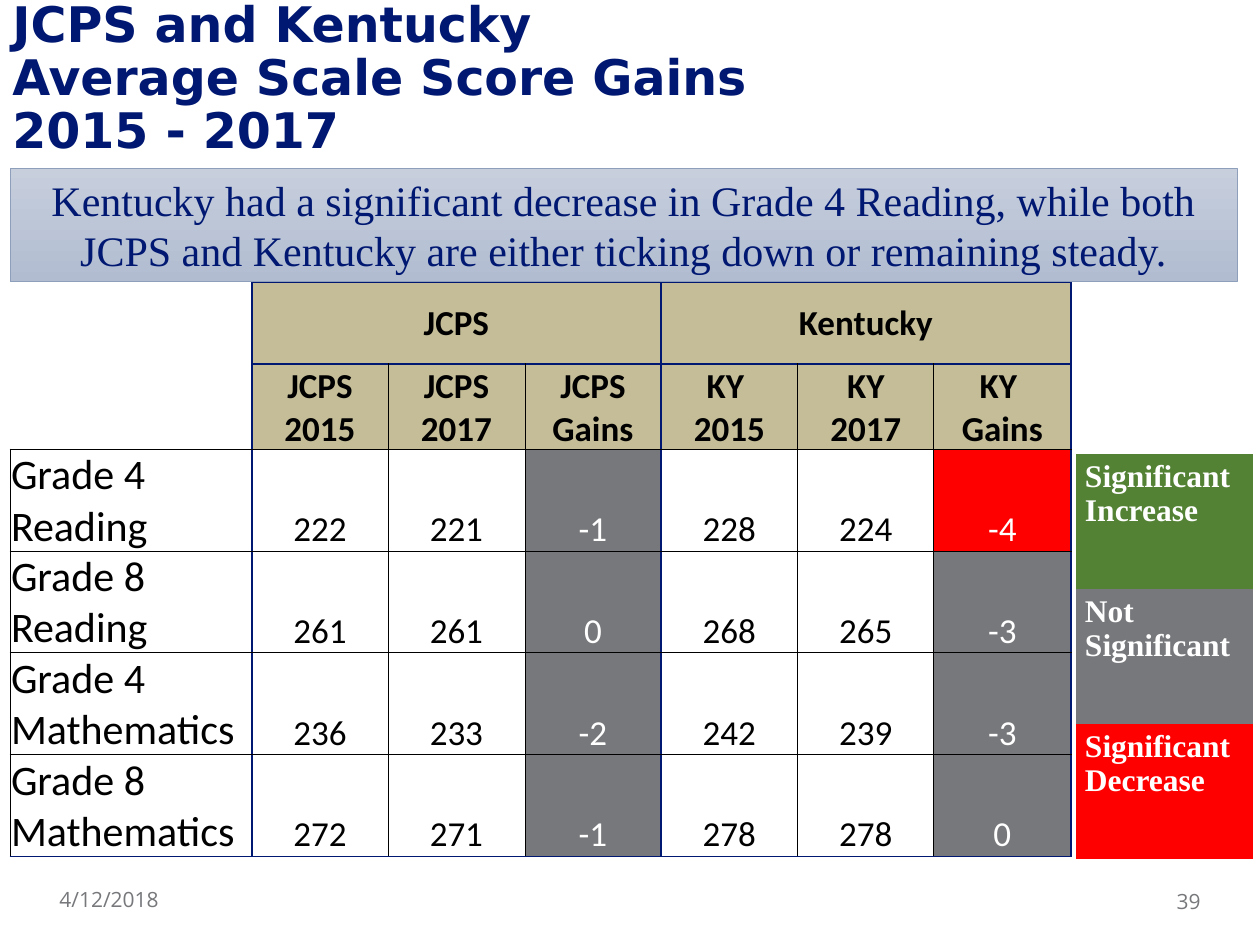
from dataclasses import dataclass

from lxml.etree import SubElement
from pptx import Presentation
from pptx.dml.color import RGBColor
from pptx.enum.shapes import MSO_SHAPE
from pptx.enum.text import MSO_ANCHOR as Anchor, PP_ALIGN as Align
from pptx.oxml.ns import qn
from pptx.util import Emu, Pt

EMU_PER_PX = 914400 / 126


@dataclass(frozen=True)
class Theme:
    navy: str = "001871"
    black: str = "000000"
    white: str = "FFFFFF"
    gray: str = "77787B"
    red: str = "FF0000"
    green: str = "548235"
    tan: str = "C4BD97"
    banner_top: str = "C7CFDD"
    banner_bottom: str = "B1BCD1"
    banner_line: str = "8E9FBC"
    title_font: str = "DejaVu Sans"
    serif_font: str = "Times New Roman"
    table_font: str = "Calibri"
    footer_font: str = "Open Sans"
    title_size: int = 28
    large_size: int = 24
    table_size: int = 20
    legend_size: int = 18
    footer_size: int = 12


THEME = Theme()
TITLE = "JCPS and Kentucky\vAverage Scale Score Gains \v2015 - 2017"
BANNER = ("Kentucky had a significant decrease in Grade 4 Reading, while both "
          "JCPS and Kentucky are either ticking down or remaining steady.")
LEGEND = [("Significant Increase", THEME.green),
          ("Not Significant", THEME.gray),
          ("Significant Decrease", THEME.red)]
GROUP_ROW = ["", "", "JCPS", "", "", "Kentucky", ""]
HEADER_ROW = ["", "JCPS 2015", "JCPS 2017", "JCPS Gains",
              "KY \n2015", "KY\n2017", "KY \nGains"]
SCORES = [["Grade 4 Reading", 222, 221, -1, 228, 224, -4],
          ["Grade 8 Reading", 261, 261, 0, 268, 265, -3],
          ["Grade 4 Mathematics", 236, 233, -2, 242, 239, -3],
          ["Grade 8\nMathematics", 272, 271, -1, 278, 278, 0]]
GAIN_COLUMNS = (3, 6)
SIGNIFICANT_DROP = -4
COLUMN_WIDTHS = [242] + [136, 137] * 3
ROW_HEIGHTS = [82] * 2 + [98] * 4


def px(*lengths):
    return [Emu(round(length * EMU_PER_PX)) for length in lengths]


def rgb(color):
    return RGBColor.from_string(color)


def write(frame, text, font, size, color, bold=False, align=Align.LEFT, spacing=None):
    frame.text = text
    for para in frame.paragraphs:
        para.alignment = align
        para.line_spacing = spacing
        for span in para.runs:
            values = {"name": font, "size": Pt(size), "bold": bold}
            for name, value in values.items():
                setattr(span.font, name, value)
            span.font.color.rgb = rgb(color)


def add_text(slide, bounds, text, **style):
    box = slide.shapes.add_textbox(*px(*bounds))
    frame = box.text_frame
    frame.word_wrap = True
    frame.vertical_anchor = Anchor.MIDDLE
    write(frame, text, **style)


def add_banner(slide):
    banner = slide.shapes.add_shape(MSO_SHAPE.RECTANGLE, *px(10, 168, 1227, 114))
    banner.shadow.inherit = False
    banner.fill.gradient()
    banner.fill.gradient_angle = 270
    colors = (THEME.banner_top, THEME.banner_bottom)
    for stop, color in zip(banner.fill.gradient_stops, colors):
        stop.color.rgb = rgb(color)
    banner.line.color.rgb = rgb(THEME.banner_line)
    banner.line.width = Pt(0.5)
    banner.text_frame.vertical_anchor = Anchor.TOP
    write(banner.text_frame, BANNER, THEME.serif_font, THEME.large_size,
          THEME.navy, align=Align.CENTER)


def add_table(slide, left, top, widths, heights):
    bounds = px(left, top, sum(widths), sum(heights))
    table = slide.shapes.add_table(len(heights), len(widths), *bounds).table
    table.first_row = table.horz_banding = False
    for column, width in zip(table.columns, px(*widths)):
        column.width = width
    for row, height in zip(table.rows, px(*heights)):
        row.height = height
    return table


def set_margins(cell, left, top, right, bottom):
    margins = {"left": left, "top": top, "right": right, "bottom": bottom}
    for side, margin in margins.items():
        setattr(cell, f"margin_{side}", *px(margin))


def set_borders(cell, borders):
    """Draw (color, points) lines by side; None hides a side. Call before filling."""
    properties = cell._tc.get_or_add_tcPr()
    for side in "LRTB":
        line = SubElement(properties, qn(f"a:ln{side}"))
        if borders.get(side) is None:
            SubElement(line, qn("a:noFill"))
            continue
        color, points = borders[side]
        line.set("w", str(Pt(points)))
        SubElement(SubElement(line, qn("a:solidFill")), qn("a:srgbClr")).set("val", color)


def set_fill(cell, color):
    if color is None:
        cell.fill.background()
    else:
        cell.fill.solid()
        cell.fill.fore_color.rgb = rgb(color)


def vertical_rule(edge, row):
    if edge in (1, 4, 7):
        return THEME.navy, 1
    hidden = row == 0 or (edge == 0 and row == 1)
    return None if hidden else (THEME.black, 0.5)


def horizontal_rule(edge, column):
    if column == 0 and edge < 2:
        return None
    return (THEME.navy, 1) if edge in (0, 1, 6) else (THEME.black, 0.5)


def score_fill(row, column, value):
    if row < 2:
        return THEME.tan if column else None
    if column in GAIN_COLUMNS:
        return THEME.red if value == SIGNIFICANT_DROP else THEME.gray
    return None


def add_score_table(slide):
    table = add_table(slide, 10, 282, COLUMN_WIDTHS, ROW_HEIGHTS)
    for r, values in enumerate([GROUP_ROW, HEADER_ROW] + SCORES):
        for c, value in enumerate(values):
            cell = table.cell(r, c)
            set_margins(cell, 1, 1, 1, 0)
            cell.vertical_anchor = Anchor.BOTTOM if r else Anchor.MIDDLE
            set_borders(cell, {"L": vertical_rule(c, r), "R": vertical_rule(c + 1, r),
                               "T": horizontal_rule(r, c), "B": horizontal_rule(r + 1, c)})
            set_fill(cell, score_fill(r, c, value))
            is_gain = r > 1 and c in GAIN_COLUMNS
            is_label = r > 1 and c == 0
            write(cell.text_frame, str(value), THEME.table_font,
                  THEME.large_size if is_label else THEME.table_size,
                  THEME.white if is_gain else THEME.black, bold=r < 2,
                  align=Align.LEFT if is_label else Align.CENTER)


def add_legend(slide):
    table = add_table(slide, 1076, 454, [177], [135] * len(LEGEND))
    for row, (text, color) in enumerate(LEGEND):
        cell = table.cell(row, 0)
        set_margins(cell, 9, 5, 9, 5)
        set_borders(cell, {})
        set_fill(cell, color)
        write(cell.text_frame, text, THEME.serif_font, THEME.legend_size,
              THEME.white, bold=True)


def main():
    deck = Presentation()
    deck.slide_width, deck.slide_height = px(1260, 945)
    slide = deck.slides.add_slide(deck.slide_layouts[6])
    footer = {"font": THEME.footer_font, "size": THEME.footer_size, "color": THEME.gray}
    add_text(slide, (930, 876, 283, 50), "39", align=Align.RIGHT, **footer)
    add_text(slide, (47, 874, 283, 50), "4/12/2018", **footer)
    add_legend(slide)
    add_score_table(slide)
    add_banner(slide)
    add_text(slide, (0, 5, 1166, 150), TITLE, font=THEME.title_font,
             size=THEME.title_size, color=THEME.navy, bold=True, spacing=0.9)
    deck.save("out.pptx")


if __name__ == "__main__":
    main()
